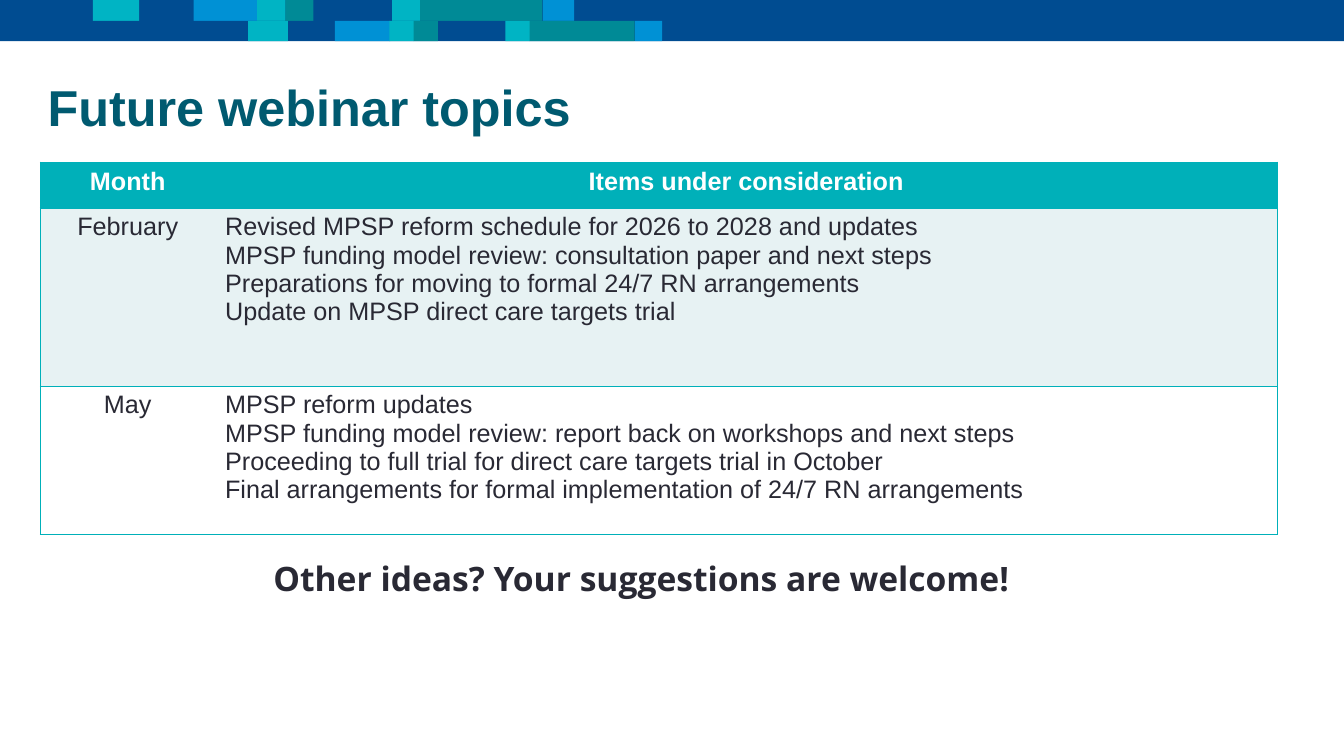
from dataclasses import dataclass
from typing import NamedTuple

from lxml.etree import SubElement as Sub
from pptx import Presentation
from pptx.dml.color import RGBColor as Rgb
from pptx.enum.shapes import MSO_SHAPE as Kind
from pptx.enum.text import MSO_ANCHOR as Anchor, MSO_AUTO_SIZE as Fit, PP_ALIGN as Align
from pptx.oxml.ns import qn
from pptx.slide import Slide
from pptx.table import Table, _Cell as Cell
from pptx.text.text import TextFrame, _Paragraph as Para
from pptx.util import Cm, Pt


@dataclass(frozen=True)
class Theme:
    navy: str = "004C91"
    aqua: str = "00B4C4"
    sky: str = "0091D5"
    teal: str = "008A96"
    title: str = "005A70"
    head: str = "00B0B9"
    tint: str = "E7F2F3"
    white: str = "FFFFFF"
    ink: str = "292934"
    sans: str = "Arial"
    open: str = "Open Sans"
    big: int = 36
    mid: int = 24
    small: int = 18


class Block(NamedTuple):
    left: float
    width: float
    color: str


class Strip(NamedTuple):
    left: float
    top: float
    scale: float
    band: float
    height: float


class Row(NamedTuple):
    month: str
    items: tuple[str, ...]
    height: float
    fill: str


class Style(NamedTuple):
    font: str
    size: int
    color: str
    bold: bool = False


THEME = Theme()
WIDTH = 33.87

BLOCKS = (
    Block(2.34, 1.17, THEME.aqua),
    Block(4.88, 1.62, THEME.sky),
    Block(6.48, 0.72, THEME.aqua),
    Block(7.19, 0.71, THEME.teal),
    Block(9.88, 0.72, THEME.aqua),
    Block(10.59, 3.08, THEME.teal),
    Block(13.68, 0.79, THEME.sky),
)
STRIPS = (
    Strip(0, 0, 1, 0.64, 0.58),
    Strip(4.24, 0.53, 0.86, 0.51, 0.51),
)
ROWS = (
    Row("Month", ("Items under consideration",), 1.15, THEME.head),
    Row("February", (
        "Revised MPSP reform schedule for 2026 to 2028 and updates",
        "MPSP funding model review: consultation paper and next steps",
        "Preparations for moving to formal 24/7 RN arrangements",
        "Update on MPSP direct care targets trial",
    ), 4.49, THEME.tint),
    Row("May", (
        "MPSP reform updates",
        "MPSP funding model review: report back on workshops and next steps",
        "Proceeding to full trial for direct care targets trial in October",
        "Final arrangements for formal implementation of 24/7 RN arrangements",
    ), 3.73, THEME.white),
)
COLS = (4.4, 26.77)
PLAIN = "{2D5ABB26-0587-4C30-8999-92F81FD0307C}"


def write(para: Para, text: str, style: Style, align: Align) -> None:
    para.alignment = align
    run = para.add_run()
    run.text = text
    font = run.font
    font.name = style.font
    font.size = Pt(style.size)
    font.bold = style.bold
    font.color.rgb = Rgb.from_string(style.color)


def frame(box: TextFrame) -> None:
    box.word_wrap = True
    box.auto_size = Fit.NONE
    box.vertical_anchor = Anchor.MIDDLE
    box.margin_left = box.margin_right = Cm(0.08)
    box.margin_top = box.margin_bottom = Cm(0.13)


def rect(slide: Slide, left: float, top: float, width: float, height: float,
         color: str) -> None:
    shape = slide.shapes.add_shape(
        Kind.RECTANGLE, Cm(left), Cm(top), Cm(width), Cm(height))
    shape.shadow.inherit = False
    shape.fill.solid()
    shape.fill.fore_color.rgb = Rgb.from_string(color)
    shape.line.fill.background()


def banner(slide: Slide) -> None:
    for strip in STRIPS:
        rect(slide, 0, strip.top, WIDTH, strip.band, THEME.navy)
        for block in BLOCKS:
            rect(slide, strip.left + block.left * strip.scale, strip.top,
                 block.width * strip.scale, strip.height, block.color)


def border(cell: Cell, sides: str) -> None:
    props = cell._tc.get_or_add_tcPr()
    for side in sides:
        line = Sub(props, qn(f"a:ln{side}"), w=str(Pt(1)))
        fill = Sub(line, qn("a:solidFill"))
        Sub(fill, qn("a:srgbClr"), val=THEME.head)


def enter(cell: Cell, lines: tuple[str, ...], style: Style, align: Align,
          sides: str, color: str) -> None:
    border(cell, sides)
    cell.fill.solid()
    cell.fill.fore_color.rgb = Rgb.from_string(color)
    box = cell.text_frame
    for num, line in enumerate(lines):
        para = box.paragraphs[0] if num == 0 else box.add_paragraph()
        write(para, line, style, align)


def fill_in(table: Table) -> None:
    table._tbl.tblPr.find(qn("a:tableStyleId")).text = PLAIN
    table.horz_banding = False
    for col, width in zip(table.columns, COLS):
        col.width = Cm(width)
    for num, row in enumerate(ROWS):
        table.rows[num].height = Cm(row.height)
        head = num == 0
        style = Style(THEME.sans, THEME.small,
                      THEME.white if head else THEME.ink, head)
        enter(table.cell(num, 0), (row.month,), style, Align.CENTER,
              "LTB", row.fill)
        enter(table.cell(num, 1), row.items, style,
              Align.CENTER if head else Align.LEFT, "RTB", row.fill)


def main() -> None:
    deck = Presentation()
    deck.slide_width, deck.slide_height = Cm(WIDTH), Cm(19.05)
    slide = deck.slides.add_slide(deck.slide_layouts[5])
    banner(slide)

    title = slide.shapes.title
    title.left, title.top = Cm(1.12), Cm(2.06)
    title.width, title.height = Cm(24.26), Cm(1.24)
    frame(title.text_frame)
    write(title.text_frame.paragraphs[0], "Future webinar topics",
          Style(THEME.sans, THEME.big, THEME.title, True), Align.LEFT)

    grid = slide.shapes.add_table(
        len(ROWS), len(COLS), Cm(1.02), Cm(4.09), Cm(sum(COLS)),
        Cm(sum(row.height for row in ROWS)))
    fill_in(grid.table)

    note = slide.shapes.add_textbox(Cm(0), Cm(13.74), Cm(32.32), Cm(1.65))
    frame(note.text_frame)
    write(note.text_frame.paragraphs[0],
          "Other ideas? Your suggestions are welcome!",
          Style(THEME.open, THEME.mid, THEME.ink, True), Align.CENTER)

    deck.save("out.pptx")


if __name__ == "__main__":
    main()
